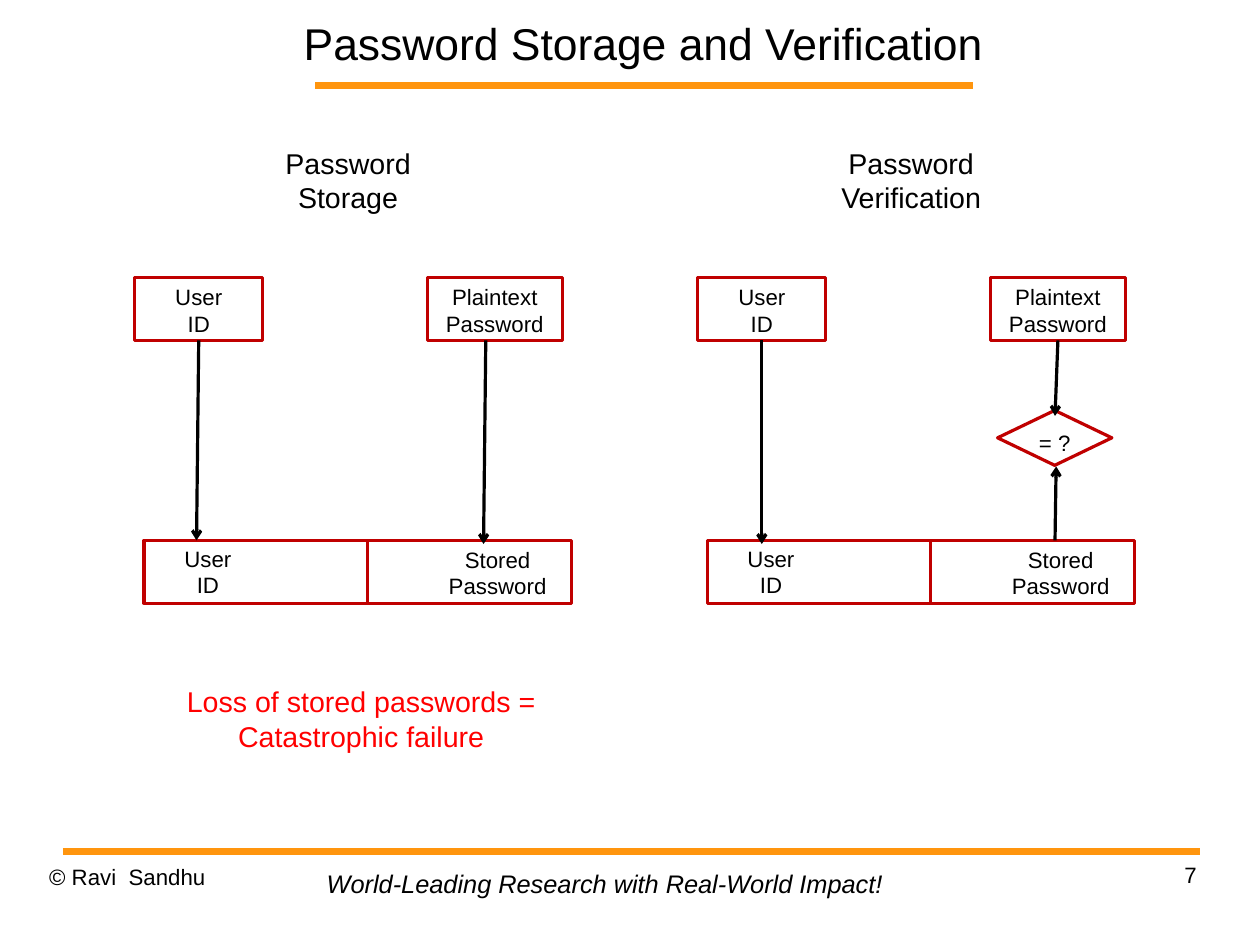
from pptx import Presentation
from pptx.dml.color import RGBColor
from pptx.enum import shapes, text
from pptx.oxml import ns
from pptx.util import Pt
from lxml import etree

BLACK, CRIMSON, RED, ORANGE = "000000", "C00000", "FF0000", "FF950E"
LEFT, CENTER, RIGHT = text.PP_ALIGN.LEFT, text.PP_ALIGN.CENTER, text.PP_ALIGN.RIGHT

TITLE = "Password Storage and Verification"
HEADINGS = ["Password Storage", "Password Verification"]
USER = ["User", "ID"]
PLAINTEXT = ["Plaintext", "Password"]
STORED = ["Stored", "Password"]
COMPARISON = ["= ?"]
WARNING = ["Loss of stored passwords =", "Catastrophic failure"]
COPYRIGHT = ["© Ravi  Sandhu"]
MOTTO = ["World-Leading Research with Real-World Impact!"]
PAGE = ["7"]
RULES = [(198.7, 54, 612.7), (39.6, 536.4, 756)]

SIDE_STEP = 354.7
INPUT_TOP, INPUT_HEIGHT = 174.8, 39.6
INPUT_BOTTOM = INPUT_TOP + INPUT_HEIGHT
RECORD_TOP = 340.4

deck = Presentation()
deck.slide_width, deck.slide_height = Pt(793.7), Pt(595.25)
slide = deck.slides.add_slide(deck.slide_layouts[5])


def color(value):
    return RGBColor.from_string(value)


def write(part, lines, size=14, ink=BLACK, align=CENTER, italic=False,
          wrap=True, inset=None, spacing=None, anchor=text.MSO_ANCHOR.TOP):
    frame = part.text_frame
    frame.word_wrap = wrap
    frame.vertical_anchor = anchor
    if inset is not None:
        frame.margin_left = frame.margin_right = Pt(inset)
        frame.margin_top = frame.margin_bottom = Pt(inset)
    frame.text = "\n".join(lines)
    for paragraph in frame.paragraphs:
        paragraph.alignment = align
        paragraph.line_spacing = spacing
        font = paragraph.font
        font.name, font.size, font.italic = "Arial", Pt(size), italic
        font.color.rgb = color(ink)


def label(lines, x, y, width, height, **style):
    part = slide.shapes.add_textbox(Pt(x), Pt(y), Pt(width), Pt(height))
    write(part, lines, **style)


def outline(x, y, width, height, lines=(), kind=shapes.MSO_SHAPE.RECTANGLE):
    part = slide.shapes.add_shape(kind, Pt(x), Pt(y), Pt(width), Pt(height))
    part.shadow.inherit = False
    part.fill.background()
    part.line.color.rgb = color(CRIMSON)
    part.line.width = Pt(2)
    if lines:
        write(part, lines)
    return part


def line(x1, y1, x2, y2, ink=BLACK, width=2, arrow=False):
    part = slide.shapes.add_connector(
        shapes.MSO_CONNECTOR.STRAIGHT, Pt(x1), Pt(y1), Pt(x2), Pt(y2))
    part.line.color.rgb = color(ink)
    part.line.width = Pt(width)
    properties = part.element.spPr
    if arrow:
        stroke = properties.find(ns.qn("a:ln"))
        etree.SubElement(stroke, ns.qn("a:tailEnd"), type="arrow")
    etree.SubElement(properties, ns.qn("a:effectLst"))
    return part


for start, y, end in RULES:
    line(start, y, end, y, ink=ORANGE, width=4.31)

title = slide.shapes.title
title.left, title.top, title.width, title.height = Pt(173.5), Pt(0), Pt(463), Pt(54)
write(title, [TITLE], size=28, inset=0, anchor=text.MSO_ANCHOR.MIDDLE)

user_inputs, password_inputs = [], []
for side, heading in enumerate(HEADINGS):
    shift = side * SIDE_STEP
    label([heading], 164.9 + shift, 88.4, 108.7, 43.9, size=18)
    user_inputs.append(outline(84.9 + shift, INPUT_TOP, 80.6, INPUT_HEIGHT, USER))
    password_inputs.append(outline(269.2 + shift, INPUT_TOP, 85, INPUT_HEIGHT, PLAINTEXT))
    outline(90.8 + shift, RECORD_TOP, 269.3, INPUT_HEIGHT)
    divider = 231.7 + shift
    line(divider, RECORD_TOP, divider, RECORD_TOP + INPUT_HEIGHT, ink=CRIMSON)
    label(USER, 95 + shift, 339.8, 72, 40.3)
    label(STORED, 271.4 + shift, RECORD_TOP, 84.2, 40.3)

comparison = outline(628.4, 258.5, 72, 34.6, COMPARISON,
                     shapes.MSO_SHAPE.FLOWCHART_DECISION)

store_user = line(125.2, INPUT_BOTTOM, 123.8, RECORD_TOP, arrow=True)
store_user.begin_connect(user_inputs[0], 2)
line(306, INPUT_BOTTOM, 304.6, 342.7, arrow=True)
look_up_user = line(479.9, INPUT_BOTTOM, 479.9, 342.7, arrow=True)
look_up_user.begin_connect(user_inputs[1], 2)
check_plaintext = line(666.4, INPUT_BOTTOM, 664.6, 262, arrow=True)
check_plaintext.begin_connect(password_inputs[1], 2)
line(664.6, RECORD_TOP, 665.3, 293.8, arrow=True)

label(WARNING, 109.4, 427.5, 236.2, 51.1, size=18, ink=RED, wrap=False)
label(COPYRIGHT, 31, 543.4, 185, 41, align=LEFT, inset=0, spacing=1.01)
label(MOTTO, 198.7, 543.6, 365.8, 26.6, size=16, align=LEFT, italic=True, wrap=False)
label(PAGE, 568.8, 542.2, 185, 41, align=RIGHT, inset=0, spacing=1.01)

deck.save("out.pptx")
